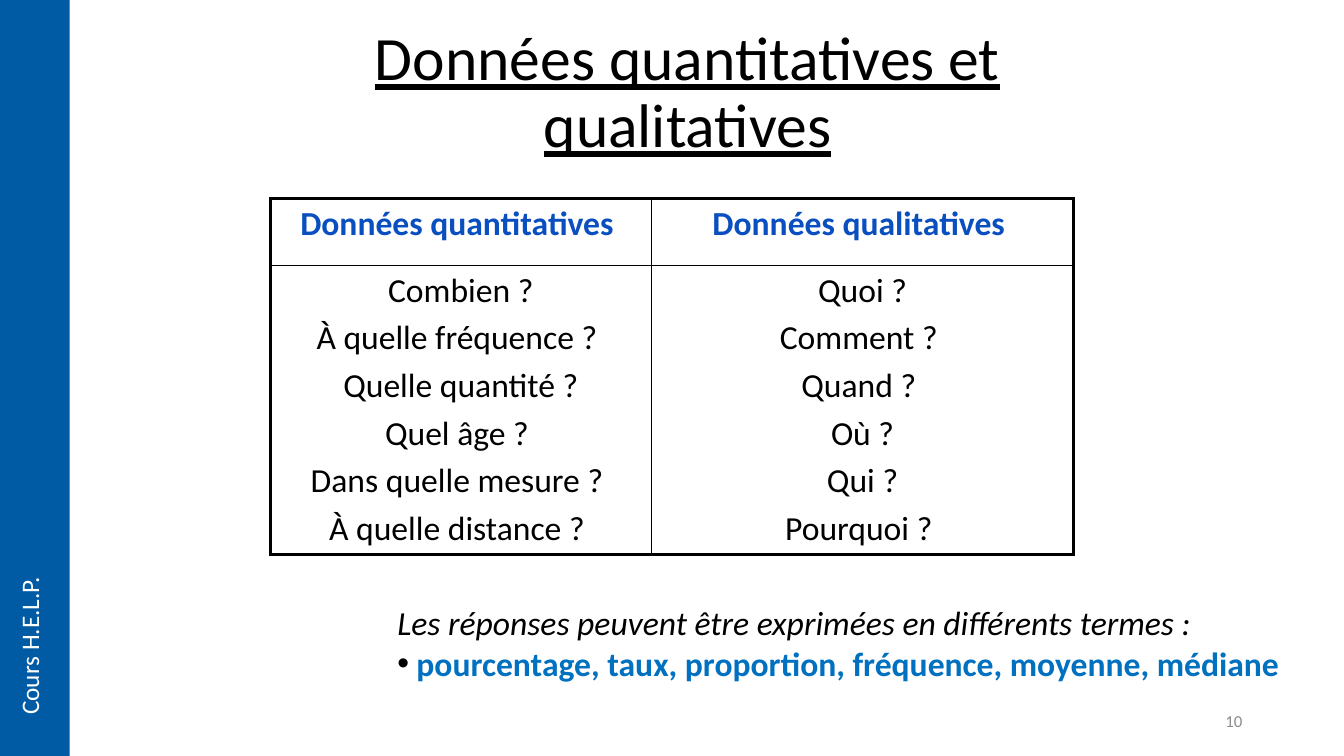
import dataclasses

import pptx
import pptx.dml.color
import pptx.enum.shapes
import pptx.enum.text
import pptx.oxml
import pptx.util
from pptx.util import Inches

ALIGN = pptx.enum.text.PP_ALIGN
ANCHOR = pptx.enum.text.MSO_ANCHOR
SPACE = 'xmlns:a="http://schemas.openxmlformats.org/drawingml/2006/main"'


@dataclasses.dataclass(frozen=True)
class Theme:
    """Colours, type sizes and line widths of the slide."""
    font: str = "Calibri"
    ink: str = "000000"
    head: str = "0A4FC0"
    accent: str = "0070C0"
    side: str = "005BA4"
    light: str = "FFFFFF"
    muted: str = "8C8C8C"
    title: int = 44
    body: int = 24
    label: int = 18
    small: int = 12
    thick: float = 2.25
    thin: float = 1


THEME = Theme()
HEADS = ["Données quantitatives ", "Données qualitatives "]
LISTS = [
    ["Combien ?", "À quelle fréquence ? ", "Quelle quantité ?",
     "Quel âge ? ", "Dans quelle mesure ? ", "À quelle distance ? "],
    ["Quoi ?", "Comment ? ", "Quand ? ", "Où ?", "Qui ?", "Pourquoi ? "],
]


def paint(color):
    """Turn a hex string into a colour."""
    return pptx.dml.color.RGBColor.from_string(color)


def style(para, size, color, bold=False, italic=False, align=ALIGN.LEFT):
    """Set the font and alignment of a paragraph."""
    para.alignment = align
    font = para.font
    font.name = THEME.font
    font.size = pptx.util.Pt(size)
    font.bold = bold
    font.italic = italic
    font.color.rgb = paint(color)


def place(shape, left, top, width, height):
    """Move and size a shape, in inches."""
    shape.left, shape.top = Inches(left), Inches(top)
    shape.width, shape.height = Inches(width), Inches(height)


def add_title(slide, text):
    """Fill the title placeholder."""
    title = slide.shapes.title
    place(title, 2.57, 0.59, 8.5, 0.69)
    frame = title.text_frame
    frame.text = text
    frame.auto_size = pptx.enum.text.MSO_AUTO_SIZE.NONE
    frame.vertical_anchor = ANCHOR.MIDDLE
    para = frame.paragraphs[0]
    para.line_spacing = 0.9
    style(para, THEME.title, THEME.ink, align=ALIGN.CENTER)
    para.font.underline = True


def add_edge(cell, side, width):
    """Draw one border of a cell."""
    cell._tc.get_or_add_tcPr().append(pptx.oxml.parse_xml(
        f'<a:ln{side} {SPACE} w="{pptx.util.Pt(width)}"><a:solidFill>'
        f'<a:srgbClr val="{THEME.ink}"/></a:solidFill></a:ln{side}>'))


def fill_cell(cell, lines, color, bold, outer):
    """Write centred lines in a cell and draw its borders."""
    frame = cell.text_frame
    frame.text = "\n".join(lines)
    for rank, para in enumerate(frame.paragraphs):
        para.space_before = pptx.util.Pt(0.2 * THEME.body if rank else 0)
        style(para, THEME.body, color, bold, align=ALIGN.CENTER)
    for side in "LRTB":
        add_edge(cell, side, THEME.thick if side in outer else THEME.thin)
    cell.fill.background()


def add_grid(slide):
    """Build the table of the two kinds of data."""
    grid = slide.shapes.add_table(
        2, 2, Inches(2.68), Inches(1.97), Inches(7.97), Inches(3.53)).table
    grid.first_row = grid.horz_banding = False
    for col, width in zip(grid.columns, (3.78, 4.19)):
        col.width = Inches(width)
    for row, height in zip(grid.rows, (0.66, 2.87)):
        row.height = Inches(height)
    for col, (head, lines) in enumerate(zip(HEADS, LISTS)):
        side = "LR"[col]
        fill_cell(grid.cell(0, col), [head], THEME.head, True, side + "T")
        fill_cell(grid.cell(1, col), lines, THEME.ink, False, side + "B")


def add_bullet(para, indent):
    """Give a paragraph a dark bullet, or none without an indent."""
    props = para._p.get_or_add_pPr()
    props.set("marL", str(Inches(indent)))
    props.set("indent", str(-Inches(indent)))
    marks = [f'<a:buClr {SPACE}><a:srgbClr val="{THEME.ink}"/></a:buClr>',
             f'<a:buChar {SPACE} char="•"/>']
    for mark in marks if indent else [f"<a:buNone {SPACE}/>"]:
        props.append(pptx.oxml.parse_xml(mark))


def add_list(slide, intro, item):
    """Fill the body placeholder with a lead-in and a bullet."""
    body = slide.placeholders[1]
    place(body, 3.84, 5.92, 9.24, 0.91)
    frame = body.text_frame
    frame.text = f"{intro}\n{item}"
    frame.auto_size = pptx.enum.text.MSO_AUTO_SIZE.NONE
    frame.vertical_anchor = ANCHOR.MIDDLE
    lead, point = frame.paragraphs
    add_bullet(lead, 0)
    add_bullet(point, 0.19)
    lead.space_before = point.space_before = pptx.util.Pt(0)
    style(lead, THEME.body, THEME.ink, italic=True)
    style(point, THEME.body, THEME.accent, bold=True)


def add_text(slide, box, text, size, color, align=ALIGN.LEFT, wrap=True):
    """Add a one-line text box and return its frame."""
    frame = slide.shapes.add_textbox(*map(Inches, box)).text_frame
    frame.word_wrap = wrap
    frame.text = text
    style(frame.paragraphs[0], size, color, align=align)
    return frame


def add_side(slide, text):
    """Draw the side band and its upright label."""
    band = slide.shapes.add_shape(
        pptx.enum.shapes.MSO_SHAPE.RECTANGLE,
        0, 0, Inches(0.69), Inches(7.5))
    band.shadow.inherit = False
    band.fill.solid()
    band.fill.fore_color.rgb = paint(THEME.side)
    band.line.fill.background()
    frame = add_text(slide, (0.09, 5.61, 0.5, 1.58), text,
                     THEME.label, THEME.light, wrap=False)
    frame._txBody.bodyPr.set("vert", "vert270")


def main():
    """Build the slide and save it."""
    deck = pptx.Presentation()
    deck.slide_width, deck.slide_height = Inches(13.33), Inches(7.5)
    slide = deck.slides.add_slide(deck.slide_layouts[1])
    add_title(slide, "Données quantitatives et qualitatives")
    add_grid(slide)
    add_list(slide,
             "Les réponses peuvent être exprimées en différents termes :",
             "pourcentage, taux, proportion, fréquence, moyenne, médiane")
    number = add_text(slide, (9.42, 6.95, 3, 0.4), "10",
                      THEME.small, THEME.muted, ALIGN.RIGHT)
    number.vertical_anchor = ANCHOR.MIDDLE
    add_side(slide, "Cours H.E.L.P.")
    deck.save("out.pptx")


if __name__ == "__main__":
    main()
